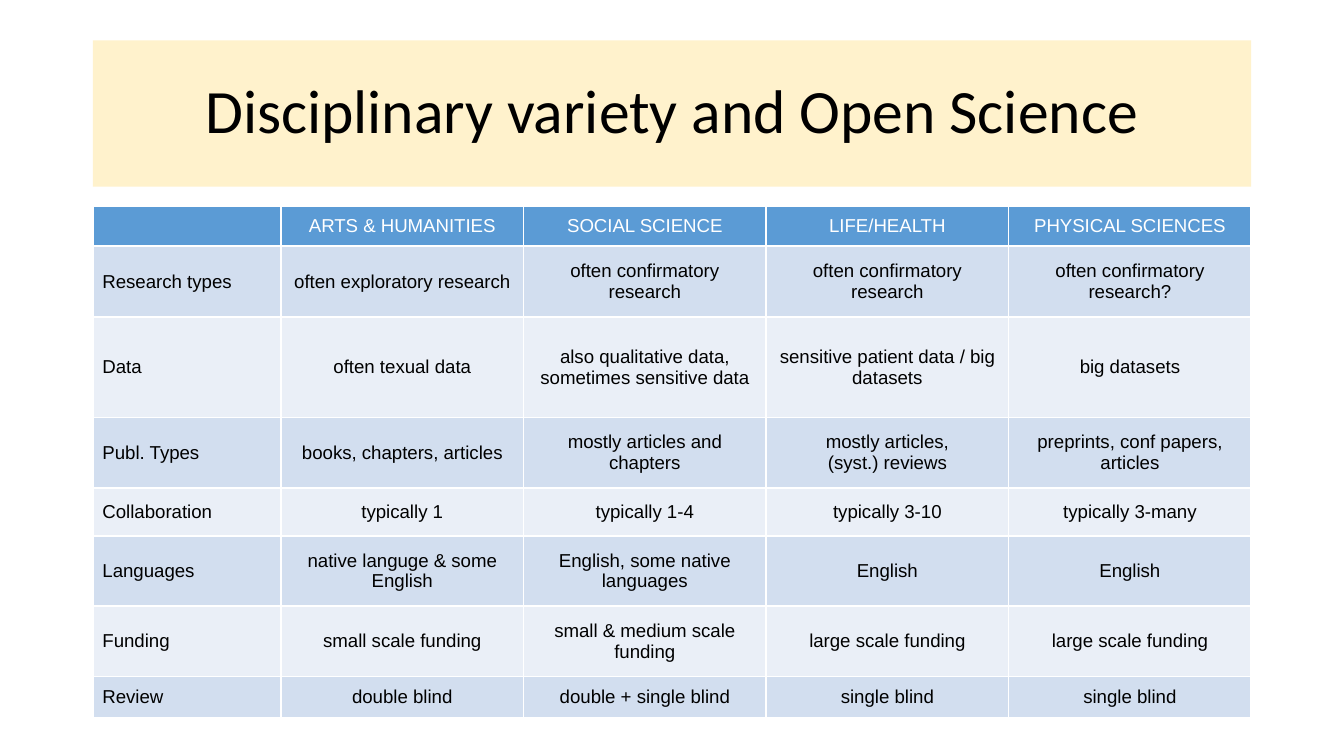
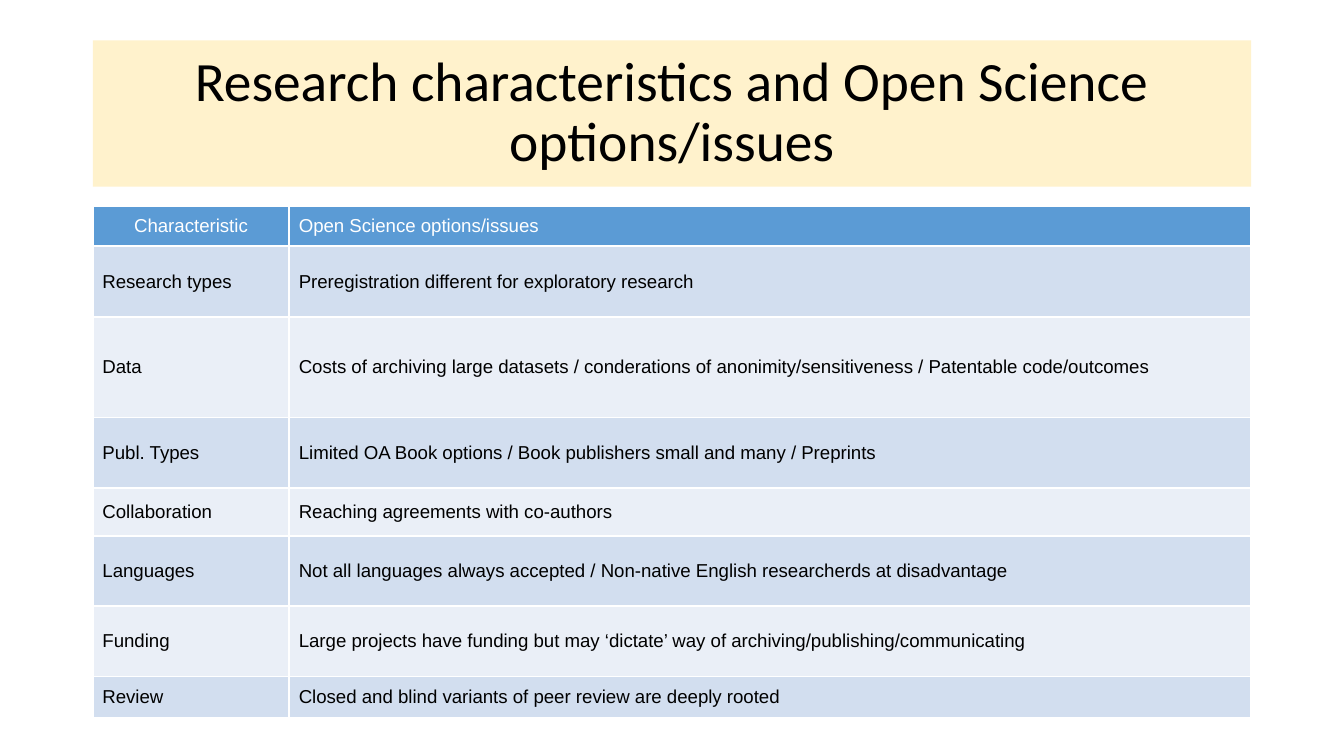
"""Build two slides comparing disciplines and their Open Science issues."""
from pptx import Presentation
from pptx.dml.color import RGBColor
from pptx.enum.shapes import MSO_SHAPE
from pptx.enum.text import MSO_ANCHOR, PP_ALIGN
from pptx.util import Pt

LEFT, CENTER = PP_ALIGN.LEFT, PP_ALIGN.CENTER
MIDDLE = MSO_ANCHOR.MIDDLE
RECTANGLE = MSO_SHAPE.RECTANGLE

BLACK = RGBColor(0x00, 0x00, 0x00)
WHITE = RGBColor(0xFF, 0xFF, 0xFF)
CREAM = RGBColor(0xFF, 0xF2, 0xCC)
BLUE = RGBColor(0x5B, 0x9B, 0xD5)
BANDS = (RGBColor(0xEA, 0xEF, 0xF7), RGBColor(0xD2, 0xDE, 0xEF))

X, WIDTH = 49.7, 620.6
TITLE_Y, TITLE_H = 21.6, 78.4
TABLE_Y = 110.5
ROW_HEIGHTS = (21.3, 38.2, 53.8, 37.7, 25.7, 37.7, 37.7, 22)

TOPICS = ("Research types", "Data", "Publ. Types", "Collaboration",
          "Languages", "Funding", "Review")

SLIDES = [
    {
        "title": "Disciplinary variety and Open Science",
        "size": 33,
        "first_width": 100.8,
        "corner": "",
        "body_align": CENTER,
        "header": ("ARTS & HUMANITIES", "SOCIAL SCIENCE", "LIFE/HEALTH",
                   "PHYSICAL SCIENCES"),
        "body": [
            ("often exploratory research", "often confirmatory research",
             "often confirmatory research", "often confirmatory research?"),
            ("often texual data",
             "also qualitative data, sometimes sensitive data",
             "sensitive patient data / big datasets", "big datasets"),
            ("books, chapters, articles", "mostly articles and chapters",
             "mostly articles,\n(syst.) reviews",
             "preprints, conf papers, articles"),
            ("typically 1", "typically 1-4", "typically 3-10",
             "typically 3-many"),
            ("native languge & some English",
             "English, some native languages", "English", "English"),
            ("small scale funding", "small & medium scale funding",
             "large scale funding", "large scale funding"),
            ("double blind", "double + single blind", "single blind",
             "single blind"),
        ],
    },
    {
        "title": "Research characteristics and Open Science options/issues",
        "size": 29.7,
        "first_width": 105.2,
        "corner": "Characteristic",
        "body_align": LEFT,
        "header": ("Open Science options/issues",),
        "body": [
            ("Preregistration different for exploratory research",),
            ("Costs of archiving large datasets / conderations of "
             "anonimity/sensitiveness / Patentable code/outcomes",),
            ("Limited OA Book options / Book publishers small and many / "
             "Preprints",),
            ("Reaching agreements with co-authors",),
            ("Not all languages always accepted / Non-native English "
             "researcherds at disadvantage",),
            ("Large projects have funding but may ‘dictate’ way of "
             "archiving/publishing/communicating",),
            ("Closed and blind variants of peer review are deeply rooted",),
        ],
    },
]


def style(p, name, size, color, align):
    p.alignment = align
    p.font.name = name
    p.font.size = Pt(size)
    p.font.bold = False
    p.font.color.rgb = color


def add_title(s, text, size):
    sp = s.shapes.add_shape(RECTANGLE, Pt(X), Pt(TITLE_Y), Pt(WIDTH),
                            Pt(TITLE_H))
    sp.shadow.inherit = False
    sp.fill.solid()
    sp.fill.fore_color.rgb = CREAM
    sp.line.fill.background()
    tf = sp.text_frame
    tf.word_wrap = True
    tf.vertical_anchor = MIDDLE
    p = tf.paragraphs[0]
    p.text = text
    p.line_spacing = 0.9
    style(p, "Calibri", size, BLACK, CENTER)


def fill_cell(cell, text, fill, color, align):
    cell.text = text
    cell.vertical_anchor = MIDDLE
    cell.margin_left = cell.margin_right = Pt(5.2)
    cell.margin_top = cell.margin_bottom = Pt(2.6)
    cell.fill.solid()
    cell.fill.fore_color.rgb = fill
    for p in cell.text_frame.paragraphs:
        style(p, "Arial", 10, color, align)


def add_grid(s, content):
    rows = [(content["corner"], *content["header"])]
    rows += [(topic, *row) for topic, row in zip(TOPICS, content["body"])]
    count = len(rows[0])
    table = s.shapes.add_table(len(rows), count, Pt(X), Pt(TABLE_Y), Pt(WIDTH),
                               Pt(sum(ROW_HEIGHTS))).table
    first = content["first_width"]
    for c, column in enumerate(table.columns):
        column.width = Pt((WIDTH - first) / (count - 1) if c else first)
    for r, (row, height) in enumerate(zip(rows, ROW_HEIGHTS)):
        table.rows[r].height = Pt(height)
        fill, color = (BANDS[r % 2], BLACK) if r else (BLUE, WHITE)
        for c, text in enumerate(row):
            first_align = LEFT if r else CENTER
            align = content["body_align"] if c else first_align
            fill_cell(table.cell(r, c), text, fill, color, align)


def main():
    prs = Presentation()
    prs.slide_width, prs.slide_height = Pt(720), Pt(405)
    for content in SLIDES:
        s = prs.slides.add_slide(prs.slide_layouts[6])
        add_title(s, content["title"], content["size"])
        add_grid(s, content)
    prs.save("out.pptx")


if __name__ == "__main__":
    main()
